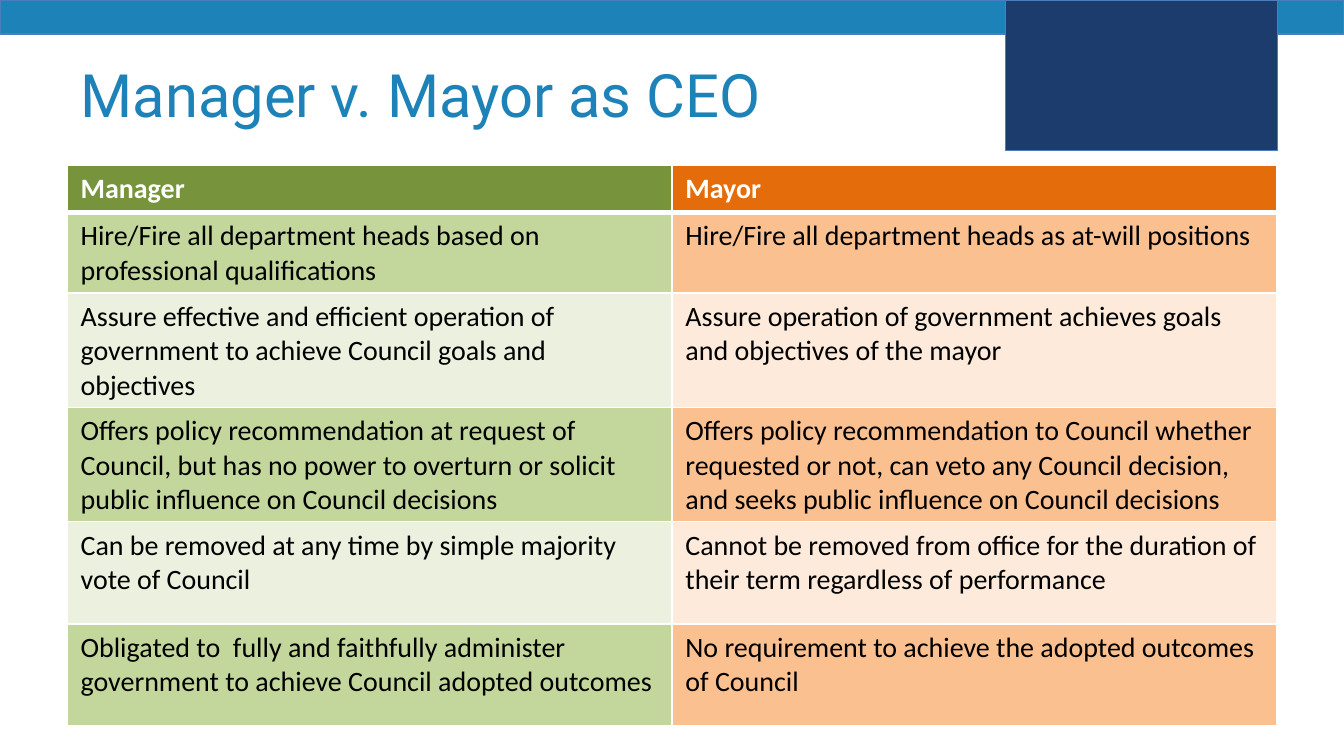
import pptx
import pptx.util
import pptx.dml.color
import pptx.enum.shapes
import pptx.enum.text
import lxml.etree

RGBColor = pptx.dml.color.RGBColor
BLUE = RGBColor(0x1C, 0x82, 0xB8)
NAVY = RGBColor(0x1C, 0x3C, 0x6D)
EDGE = RGBColor(0x4B, 0x7E, 0xBC)
WHITE = RGBColor(0xFF, 0xFF, 0xFF)
BLACK = RGBColor(0, 0, 0)
GREEN = RGBColor(0x77, 0x93, 0x3C)
LEAF = RGBColor(0xC3, 0xD6, 0x9B)
MINT = RGBColor(0xEB, 0xF1, 0xDE)
RUST = RGBColor(0xE4, 0x6C, 0x0A)
PEACH = RGBColor(0xFA, 0xC0, 0x90)
CREAM = RGBColor(0xFD, 0xEA, 0xDA)

deck = pptx.Presentation()
deck.slide_width = pptx.util.Inches(10)
deck.slide_height = deck.slide_width * 9 // 16
COL = deck.slide_width / 20
ROW = deck.slide_height / 45
slide = deck.slides.add_slide(deck.slide_layouts[6])


def place(left, top, width, height):
    return int(left * COL), int(top * ROW), int(width * COL), int(height * ROW)


def style(font, color, form):
    for key, value in form.items():
        setattr(font, key, value)
    font.color.rgb = color


for box, color in [((0, 0, 20, 2.04), BLUE), ((14.96, 0, 4.05, 8.95), NAVY)]:
    block = slide.shapes.add_shape(pptx.enum.shapes.MSO_SHAPE.RECTANGLE, *place(*box))
    block.shadow.inherit = False
    block.fill.solid()
    block.fill.fore_color.rgb = color
    block.line.color.rgb = EDGE
    block.line.width = pptx.util.Pt(0.75)

title = slide.shapes.add_textbox(*place(1, 1.84, 18, 7.52)).text_frame
title.word_wrap = True
title.vertical_anchor = pptx.enum.text.MSO_ANCHOR.MIDDLE
title.text = "Manager v. Mayor as CEO"
style(title.paragraphs[0].runs[0].font, BLUE, {"name": "Roboto", "size": pptx.util.Pt(32)})

duties = [
    ("Manager", "Mayor"),
    ("Hire/Fire all department heads based on professional qualifications",
     "Hire/Fire all department heads as at-will positions"),
    ("Assure effective and efficient operation of government to achieve Council goals and objectives",
     "Assure operation of government achieves goals and objectives of the mayor"),
    ("Offers policy recommendation at request of Council, but has no power to overturn or solicit "
     "public influence on Council decisions",
     "Offers policy recommendation to Council whether requested or not, can veto any Council decision, "
     "and seeks public influence on Council decisions"),
    ("Can be removed at any time by simple majority vote of Council",
     "Cannot be removed from office for the duration of their term regardless of performance"),
    ("Obligated to  fully and faithfully administer government to achieve Council adopted outcomes",
     "No requirement to achieve the adopted outcomes of Council"),
]
tints = [(GREEN, LEAF, MINT), (RUST, PEACH, CREAM)]
heights = [2.48, 4.32] + [6.08] * 4
spot = place(1, 9.84, 18, 33.36)
frame = slide.shapes.add_table(len(duties), 2, *spot)
table = frame.table

for r, pair in enumerate(duties):
    table.rows[r].height = int(heights[r] * ROW)
    head = r == 0
    form = {"name": "Calibri", "size": pptx.util.Pt(15), "bold": head}
    for c, text in enumerate(pair):
        cell = table.cell(r, c)
        cell.text = text
        style(cell.text_frame.paragraphs[0].runs[0].font, WHITE if head else BLACK, form)
        cell.fill.solid()
        cell.fill.fore_color.rgb = tints[c][0 if head else 2 - r % 2]
        thick = {"lnL": 1, "lnR": 1, "lnT": 3 if r == 1 else 1, "lnB": 3 if head else 1}
        for i, (side, width) in enumerate(thick.items()):
            line = lxml.etree.Element(pptx.oxml.ns.qn("a:" + side), w=str(pptx.util.Pt(width)))
            paint = lxml.etree.SubElement(line, pptx.oxml.ns.qn("a:solidFill"))
            lxml.etree.SubElement(paint, pptx.oxml.ns.qn("a:srgbClr"), val=str(WHITE))
            cell._tc.get_or_add_tcPr().insert(i, line)

frame.height = spot[3]
deck.save("out.pptx")
